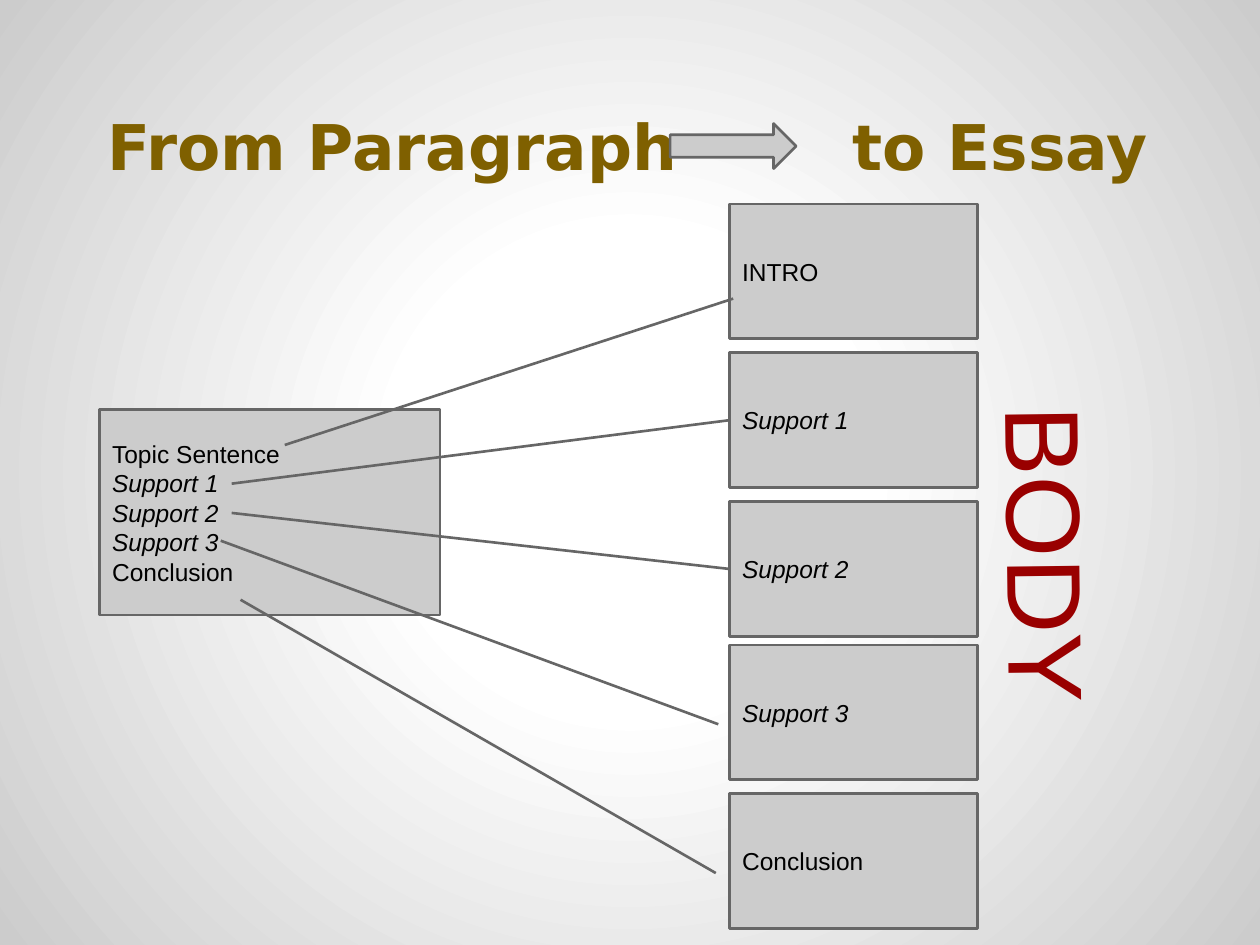
from lxml import etree
from pptx import Presentation
from pptx.dml.color import RGBColor
from pptx.enum.shapes import MSO_CONNECTOR as Line, MSO_SHAPE as Shape
from pptx.enum.text import MSO_ANCHOR as Anchor, MSO_AUTO_SIZE as Fit, PP_ALIGN as Align
from pptx.oxml import parse_xml
from pptx.oxml.ns import nsdecls, qn
from pptx.util import Cm, Pt

HUES = {"gold": "7F6000", "gray": "CCCCCC", "edge": "666666",
        "ink": "000000", "red": "990000", "white": "FFFFFF"}
TITLE = [("From Paragraph", 1.91, 14.9), ("to Essay", 16.93, 7.6)]
OUTLINE = ["Topic Sentence", "Support 1", "Support 2", "Support 3", "Conclusion"]
ESSAY = [("INTRO", 4.11), ("Support 1", 7.11), ("Support 2", 10.11),
         ("Support 3", 13.0), ("Conclusion", 16.0)]
LINKS = [((5.74, 8.97), (14.78, 6.02)), ((4.67, 9.75), None), ((4.67, 10.34), None),
         ((4.45, 10.9), (14.48, 14.6)), ((4.85, 12.09), (14.43, 17.6))]
LEFT, WIDE, HIGH = 14.71, 5.0, 2.72


def color(name):
    return RGBColor.from_string(HUES[name])


def write(shape, lines, size=14, font="Arial", hue="ink", bold=False,
          anchor=Anchor.MIDDLE, fit=Fit.NONE):
    frame = shape.text_frame
    frame.word_wrap, frame.vertical_anchor, frame.auto_size = True, anchor, fit
    frame.margin_left = frame.margin_right = Cm(0.25)
    frame.margin_top = frame.margin_bottom = Cm(0.25)
    for i, line in enumerate(lines):
        para = frame.add_paragraph() if i else frame.paragraphs[0]
        para.alignment = Align.LEFT
        run = para.add_run()
        run.text = line
        face = run.font
        face.size, face.name, face.bold = Pt(size), font, bold
        face.italic = line.startswith("Support")
        face.color.rgb = color(hue)


def block(slide, kind, *box):
    shape = slide.shapes.add_shape(kind, *map(Cm, box))
    shape.shadow.inherit = False
    shape.fill.solid()
    shape.fill.fore_color.rgb = color("gray")
    shape.line.color.rgb = color("edge")
    shape.line.width = Pt(1.5)
    return shape


def link(slide, start, end, goal):
    end = end or (LEFT, goal.top.cm + HIGH / 2)
    line = slide.shapes.add_connector(Line.STRAIGHT, *map(Cm, start + end))
    if end[0] == LEFT:
        line.end_connect(goal, 1)
    line.line.color.rgb = color("edge")
    line.line.width = Pt(1.5)
    etree.SubElement(line.element.spPr, qn("a:effectLst"))


def shade(slide):
    slide.background.fill.gradient()
    old = next(slide.element.iter(qn("a:gradFill")))
    stops = "".join(f'<a:gs pos="{pos}"><a:srgbClr val="{HUES[hue]}"/></a:gs>'
                    for pos, hue in [(0, "white"), (30000, "white"), (100000, "gray")])
    new = parse_xml(f'<a:gradFill {nsdecls("a")}><a:gsLst>{stops}</a:gsLst><a:path path="circle">'
                    '<a:fillToRect l="50000" t="50000" r="50000" b="50000"/></a:path></a:gradFill>')
    old.getparent().replace(old, new)


def head(slide):
    pair = slide.shapes.title, slide.shapes.add_textbox(0, 0, 0, 0)
    for shape, (text, left, wide) in zip(pair, TITLE):
        shape.left, shape.top, shape.width, shape.height = map(Cm, (left, 0.76, wide, 3.18))
        write(shape, [text], size=36, font="DejaVu Sans", hue="gold", bold=True,
              anchor=Anchor.BOTTOM)


def main():
    deck = Presentation()
    deck.slide_width, deck.slide_height = Cm(25.4), Cm(19.05)
    slide = deck.slides.add_slide(deck.slide_layouts[5])
    shade(slide)
    head(slide)
    block(slide, Shape.RIGHT_ARROW, 13.51, 2.49, 2.54, 0.91)
    write(block(slide, Shape.RECTANGLE, 2.01, 8.26, 6.86, 4.14), OUTLINE)
    parts = []
    for text, top in ESSAY:
        part = block(slide, Shape.RECTANGLE, LEFT, top, WIDE, HIGH)
        write(part, [text])
        parts.append(part)
    for (start, end), part in zip(LINKS, parts):
        link(slide, start, end, part)
    body = slide.shapes.add_textbox(*map(Cm, (17.7, 11.79, 8.86, 1.12)))
    body.rotation = 89.3
    write(body, ["BODY"], size=60, hue="red", anchor=Anchor.TOP, fit=Fit.SHAPE_TO_FIT_TEXT)
    deck.save("out.pptx")


if __name__ == "__main__":
    main()
